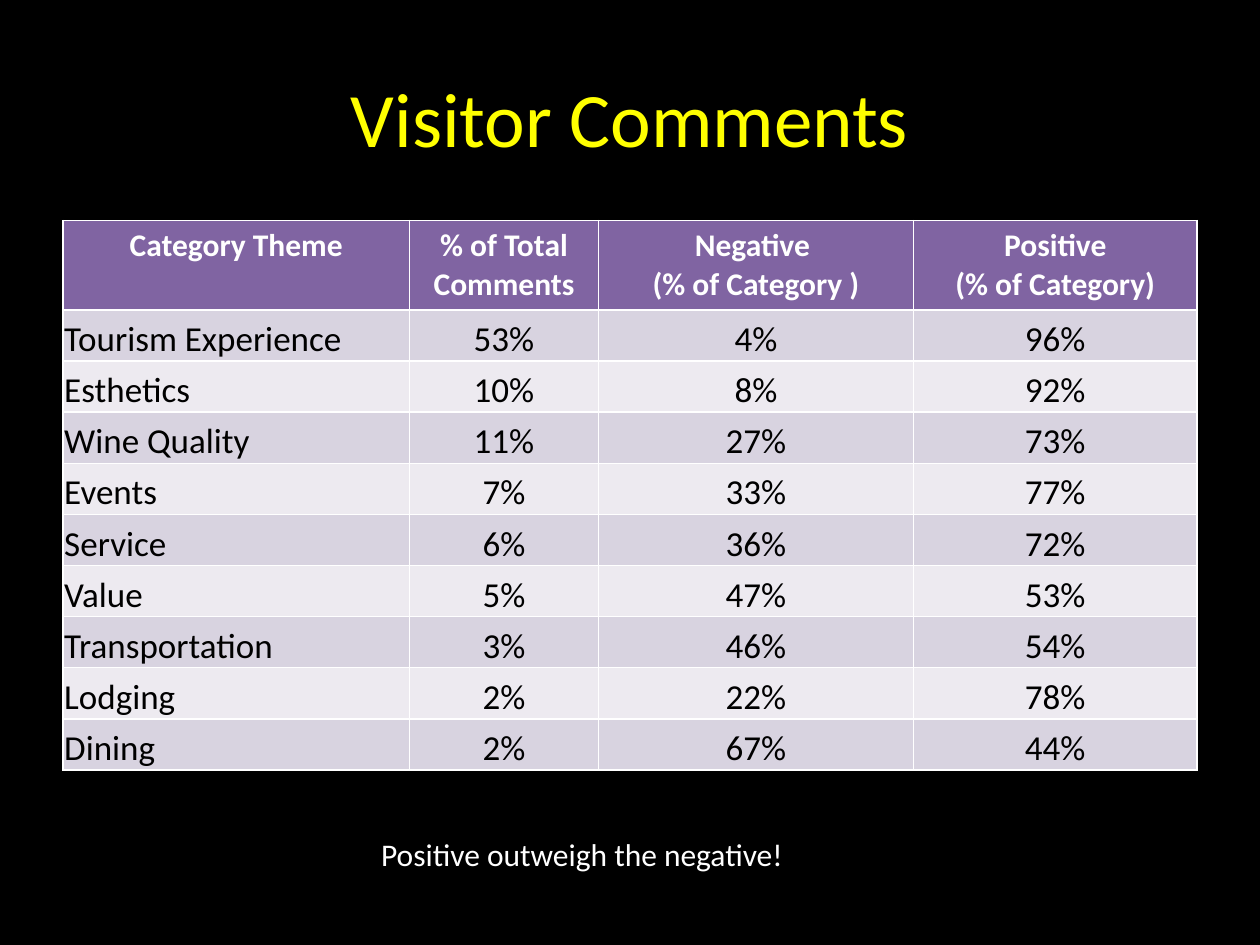
"""Build the Visitor Comments slide with its table of comment themes."""
from pptx import Presentation
from pptx.dml.color import RGBColor
from pptx.enum import text as t
from pptx.util import Inches, Pt


def write(frame, content, size, color, bold=False, align=t.PP_ALIGN.CENTER):
    frame.text = content
    for paragraph in frame.paragraphs:
        paragraph.alignment = align
        for run in paragraph.runs:
            run.font.name = "Calibri"
            run.font.size = Pt(size)
            run.font.bold = bold
            run.font.color.rgb = RGBColor.from_string(color)


deck = Presentation()
deck.slide_width, deck.slide_height = Inches(10), Inches(7.5)
slide = deck.slides.add_slide(deck.slide_layouts[5])
slide.background.fill.solid()
slide.background.fill.fore_color.rgb = RGBColor.from_string("000000")

heading = slide.shapes.title
heading.left, heading.top = Inches(0.5), Inches(0.3)
heading.width, heading.height = Inches(9), Inches(1.25)
heading.text_frame.vertical_anchor = t.MSO_ANCHOR.MIDDLE
write(heading.text_frame, "Visitor Comments", 44, "FFFF00")

comments = [
    ("Category Theme", "% of Total Comments", "Negative \n(% of Category )", "Positive\n(% of Category)"),
    ("Tourism Experience", "53%", "4%", "96%"),
    ("Esthetics", "10%", "8%", "92%"),
    ("Wine Quality", "11%", "27%", "73%"),
    ("Events", "7%", "33%", "77%"),
    ("Service", "6%", "36%", "72%"),
    ("Value", "5%", "47%", "53%"),
    ("Transportation", "3%", "46%", "54%"),
    ("Lodging", "2%", "22%", "78%"),
    ("Dining", "2%", "67%", "44%"),
]
column_widths = [2.75, 1.5, 2.5, 2.25]
table_height, header_height = 4.35, 0.7
theme_height = (table_height - header_height) / (len(comments) - 1)

themes = slide.shapes.add_table(
    len(comments), len(column_widths), Inches(0.5), Inches(1.75), Inches(9), Inches(table_height)
).table
for column, width in zip(themes.columns, column_widths):
    column.width = Inches(width)

for r, values in enumerate(comments):
    themes.rows[r].height = Inches(theme_height if r else header_height)
    for c, value in enumerate(values):
        cell = themes.cell(r, c)
        cell.fill.solid()
        band = ("D8D3E0" if r % 2 else "EDEAF0") if r else "8064A2"
        cell.fill.fore_color.rgb = RGBColor.from_string(band)
        if r == 0:
            write(cell.text_frame, value, 18, "FFFFFF", bold=True)
            continue
        cell.vertical_anchor = t.MSO_ANCHOR.BOTTOM
        cell.margin_left = cell.margin_right = cell.margin_top = Inches(0.01)
        cell.margin_bottom = Inches(0)
        align = t.PP_ALIGN.CENTER if c else t.PP_ALIGN.LEFT
        write(cell.text_frame, value, 20, "000000", align=align)

conclusion = slide.shapes.add_textbox(Inches(1.33), Inches(6.58), Inches(6.58), Inches(0.4)).text_frame
conclusion.word_wrap = True
conclusion.auto_size = t.MSO_AUTO_SIZE.SHAPE_TO_FIT_TEXT
write(conclusion, "Positive outweigh the negative!", 18, "FFFFFF")

deck.save("out.pptx")
